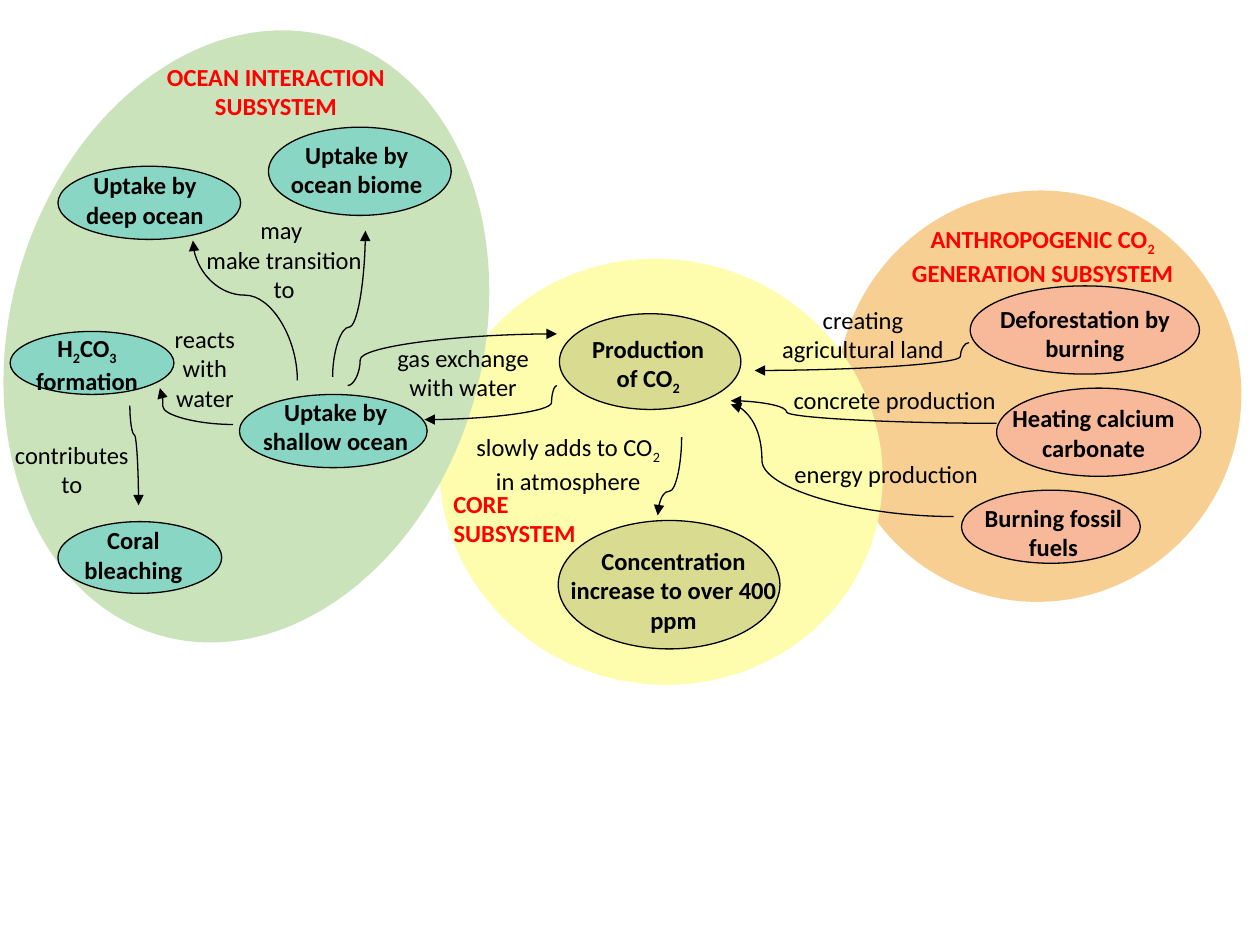
from lxml.etree import SubElement
from pptx import Presentation
from pptx.dml.color import RGBColor
from pptx.enum.shapes import MSO_CONNECTOR as Connector, MSO_SHAPE as Shape
from pptx.enum.text import MSO_AUTO_SIZE as AutoSize, PP_ALIGN as Align
from pptx.oxml.ns import qn
from pptx.util import Pt

COLORS = {
    "orange": "F7CF93", "yellow": "FDFDAD", "green": "CBE3BB",
    "olive": "D9DB91", "salmon": "F8B99A", "teal": "8AD6C4",
    "title": "FF0000", "ink": "000000",
}
INSETS = (7.2, 3.6)

# Subsystem backgrounds: color, (left, top, width, height), rotation
SUBSYSTEMS = [
    ("orange", (478.1, 108.7, 231.1, 235.4), 16),
    ("yellow", (250.6, 148.3, 254.2, 242.6), 16),
    ("green", (5.8, 14.4, 270, 355.7), 16.2),
]

# Nodes: color, ellipse box, text, text box; "_" lowers the next character
NODES = [
    ("olive", (319.7, 179.3, 103.7, 54.7), "Production of CO_2", (336.2, 190.8, 68.4, 81.4)),
    ("olive", (319, 297.4, 126.7, 73.4), "Concentration increase to over 400 ppm",
     (320.4, 311.8, 128.9, 51.1)),
    ("salmon", (569.5, 221.8, 116.6, 50.4), "Heating calcium carbonate", (573.1, 230.4, 103.7, 33.8)),
    ("salmon", (554.4, 163.4, 131, 50.4), "Deforestation by burning", (563.8, 173.5, 112.3, 33.8)),
    ("salmon", (549.4, 280.1, 102.2, 41.8), "Burning fossil fuels", (549.4, 287.3, 105.1, 33.8)),
    ("teal", (33.1, 298.1, 93.6, 41), "Coral bleaching", (36.7, 300.2, 79.2, 33.8)),
    ("teal", (5.8, 189.4, 93.6, 36), "H_2CO_3 formation", (18, 190.1, 63.4, 50.4)),
    ("teal", (33.1, 95, 104.4, 41.8), "Uptake by deep ocean", (43.9, 97.2, 77.8, 51.1)),
    ("teal", (153.4, 72.7, 104.4, 50.4), "Uptake by ocean biome", (164.9, 79.9, 77.8, 41)),
    ("teal", (136.8, 225.4, 107.3, 41.8), "Uptake by shallow ocean", (149, 226.8, 85.7, 33.8)),
]

TITLES = [
    ("ANTHROPOGENIC CO_2 GENERATION SUBSYSTEM", (520.6, 128.2, 150.5, 33.8)),
    ("OCEAN INTERACTION SUBSYSTEM", (89.3, 35.3, 136.8, 34.6)),
]
CORE_TITLE = ("CORE\nSUBSYSTEM", (252, 275.8, 84.2, 41))

LINKS_TEXT = [
    ("slowly adds to CO_2 in atmosphere", (270.7, 247, 108, 33.8)),
    ("concrete production", (448.6, 220.3, 125.3, 17.3)),
    ("creating agricultural land", (437, 174.2, 112.3, 33.8)),
    ("energy production", (444.2, 262.1, 124.6, 17.3)),
    ("contributes to", (3.6, 251.3, 74.9, 33.8)),
    ("reacts with water", (88.6, 185, 56.9, 51.1)),
    ("may \nmake transition to", (115.2, 123.1, 94.3, 51.1)),
    ("gas exchange with water", (218.2, 195.8, 92.9, 33.8)),
]

# Arrows: start, end, bend position (share of the run), leaves vertically
ARROWS = [
    ((389.5, 249.8), (375.8, 294.5), 0.69, True),
    ((569.5, 241.9), (417.6, 229), 0.79, False),
    ((553.7, 195.8), (431.3, 211.7), 0.04, False),
    ((545, 295.2), (417.6, 231.1), 0.86, False),
    ((74.2, 231.8), (79.2, 288.7), 0.29, True),
    ((133.2, 242.6), (91.4, 221.8), 0.96, False),
    ((169.9, 217.4), (110.2, 137.5), 0.61, True),
    ((190.1, 215.3), (208.8, 131.8), 0.34, True),
    ((318.2, 220.3), (242.6, 239.8), 0.04, False),
    ((198.7, 220.3), (318.2, 190.8), 0.06, False),
]


def color(name):
    return RGBColor.from_string(COLORS[name])


def add_ellipse(slide, box, fill, rotation=0, outlined=False):
    shape = slide.shapes.add_shape(Shape.OVAL, *map(Pt, box))
    shape.shadow.inherit = False
    shape.rotation = rotation
    shape.fill.solid()
    shape.fill.fore_color.rgb = color(fill)
    if outlined:
        shape.line.color.rgb = color("ink")
        shape.line.width = Pt(0.75)
    else:
        shape.line.fill.background()


def add_text(slide, text, box, ink="ink", bold=False, aligns=(Align.CENTER,), insets=(0, 0)):
    frame = slide.shapes.add_textbox(*map(Pt, box)).text_frame
    frame.word_wrap = True
    frame.auto_size = AutoSize.SHAPE_TO_FIT_TEXT
    frame.margin_left = frame.margin_right = Pt(insets[0])
    frame.margin_top = frame.margin_bottom = Pt(insets[1])
    for index, line in enumerate(text.split("\n")):
        paragraph = frame.add_paragraph() if index else frame.paragraphs[0]
        paragraph.alignment = aligns[index % len(aligns)]
        first, *others = line.split("_")
        pieces = [(first, False)]
        for other in others:
            pieces += [(other[0], True), (other[1:], False)]
        for piece, lowered in pieces:
            if not piece:
                continue
            run = paragraph.add_run()
            run.text = piece
            run.font.name = "Calibri"
            run.font.size = Pt(14)
            run.font.bold = bold
            run.font.color.rgb = color(ink)
            if lowered:
                run.font._element.set("baseline", "-25000")


def add_arrow(slide, start, end, bend, vertical):
    (x1, y1), (x2, y2) = start, end
    down = y2 > y1
    if vertical:
        # Lay the curve out flat about its centre, then turn it a quarter
        center_x, center_y = (x1 + x2) / 2, (y1 + y2) / 2
        half_run = abs(y2 - y1) / 2
        half_drop = (x1 - x2 if down else x2 - x1) / 2
        x1, x2 = center_x - half_run, center_x + half_run
        y1, y2 = center_y - half_drop, center_y + half_drop
    connector = slide.shapes.add_connector(Connector.CURVE, *map(Pt, (x1, y1, x2, y2)))
    connector.line.color.rgb = color("ink")
    connector.line.width = Pt(0.75)
    properties = connector._element.spPr
    if vertical:
        properties.find(qn("a:xfrm")).set("rot", str((90 if down else 270) * 60000))
    geometry = properties.find(qn("a:prstGeom"))
    adjustments = geometry.find(qn("a:avLst"))
    if adjustments is None:
        adjustments = SubElement(geometry, qn("a:avLst"))
    SubElement(adjustments, qn("a:gd"), name="adj1", fmla=f"val {round(bend * 100000)}")
    SubElement(connector.line._get_or_add_ln(), qn("a:tailEnd"), type="triangle")
    SubElement(properties, qn("a:effectLst"))


def main():
    presentation = Presentation()
    presentation.slide_width, presentation.slide_height = Pt(720), Pt(540)
    slide = presentation.slides.add_slide(presentation.slide_layouts[6])

    # Subsystems and their titles
    for fill, box, rotation in SUBSYSTEMS:
        add_ellipse(slide, box, fill, rotation)
    for text, box in TITLES:
        add_text(slide, text, box, ink="title", bold=True)

    # Nodes
    for fill, box, text, text_box in NODES:
        add_ellipse(slide, box, fill, outlined=True)
        add_text(slide, text, text_box, bold=True)

    # Arrows and what they say
    for arrow in ARROWS:
        add_arrow(slide, *arrow)
    for text, box in LINKS_TEXT:
        add_text(slide, text, box)
    add_text(slide, *CORE_TITLE, ink="title", bold=True,
             aligns=(Align.LEFT, Align.CENTER), insets=INSETS)

    presentation.save("out.pptx")


if __name__ == "__main__":
    main()
